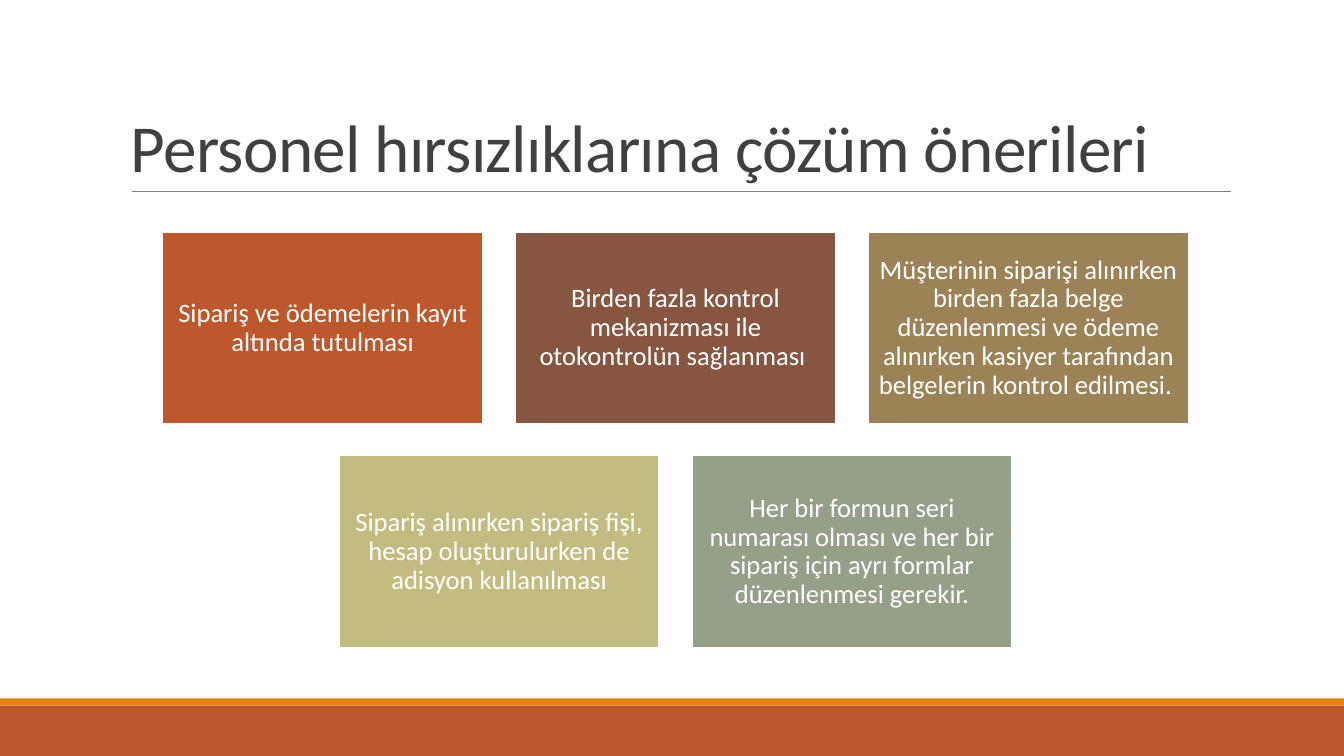
from pptx import Presentation
from pptx.dml.color import RGBColor
from pptx.enum.shapes import MSO_CONNECTOR, MSO_SHAPE
from pptx.enum.text import MSO_ANCHOR, PP_ALIGN
from pptx.oxml.ns import qn
from pptx.util import Inches, Pt
from lxml.etree import SubElement

WHITE = RGBColor(0xFF, 0xFF, 0xFF)
TITLE_GRAY = RGBColor(0x40, 0x40, 0x40)
RULE_GRAY = RGBColor(0x80, 0x80, 0x80)
RUST = RGBColor(0xBD, 0x58, 0x2C)
ORANGE = RGBColor(0xE4, 0x83, 0x12)
BROWN = RGBColor(0x86, 0x56, 0x40)
TAN = RGBColor(0x9B, 0x83, 0x57)
KHAKI = RGBColor(0xC2, 0xBC, 0x80)
SAGE = RGBColor(0x94, 0xA0, 0x88)

TITLE = "Personel hırsızlıklarına çözüm önerileri"
CARD_ROWS = [
    [
        ("Sipariş ve ödemelerin kayıt altında tutulması", RUST),
        ("Birden fazla kontrol mekanizması ile otokontrolün sağlanması ", BROWN),
        ("Müşterinin siparişi alınırken birden fazla belge düzenlenmesi ve ödeme "
         "alınırken kasiyer tarafından belgelerin kontrol edilmesi. ", TAN),
    ],
    [
        ("Sipariş alınırken sipariş fişi, hesap oluşturulurken de adisyon kullanılması", KHAKI),
        ("Her bir formun seri numarası olması ve her bir sipariş için ayrı formlar "
         "düzenlenmesi gerekir.", SAGE),
    ],
]
FOOTER_BANDS = [(7, 0.5, RUST), (6.93, 0.07, ORANGE)]

SLIDE_WIDTH, SLIDE_HEIGHT = 13.33, 7.5
CARD_WIDTH, CARD_HEIGHT = 3.18, 1.91
CARD_GAP_X, CARD_GAP_Y = 0.32, 0.31
CARDS_CENTER, CARDS_TOP = 6.7, 2.3

CARD_FRAME = {"word_wrap": True, "vertical_anchor": MSO_ANCHOR.MIDDLE,
              "margin_left": Inches(0.08), "margin_right": Inches(0.08),
              "margin_top": Inches(0.08), "margin_bottom": Inches(0.08)}
CARD_PARAGRAPH = {"alignment": PP_ALIGN.CENTER, "line_spacing": 0.9}
CARD_FONT = {"name": "Calibri", "size": Pt(19)}
TITLE_FRAME = {"word_wrap": True, "vertical_anchor": MSO_ANCHOR.BOTTOM}
TITLE_PARAGRAPH = {"alignment": PP_ALIGN.LEFT, "line_spacing": 0.85}
TITLE_FONT = {"name": "Calibri", "size": Pt(48)}


def set_attributes(target, values):
    for name, value in values.items():
        setattr(target, name, value)


def write_text(shape, text, color, frame_format, paragraph_format, font_format):
    frame = shape.text_frame
    set_attributes(frame, frame_format)
    paragraph = frame.paragraphs[0]
    set_attributes(paragraph, paragraph_format)
    run = paragraph.add_run()
    run.text = text
    set_attributes(run.font, font_format)
    run.font.color.rgb = color
    return run


def add_rectangle(slide, left, top, width, height, color):
    shape = slide.shapes.add_shape(
        MSO_SHAPE.RECTANGLE, Inches(left), Inches(top), Inches(width), Inches(height))
    shape.shadow.inherit = False
    shape.fill.solid()
    shape.fill.fore_color.rgb = color
    shape.line.fill.background()
    return shape


def add_title(slide):
    box = slide.shapes.add_textbox(Inches(1.2), Inches(0.31), Inches(11), Inches(1.59))
    run = write_text(box, TITLE, TITLE_GRAY, TITLE_FRAME, TITLE_PARAGRAPH, TITLE_FONT)
    run.font._element.set("spc", "-50")
    rule = slide.shapes.add_connector(
        MSO_CONNECTOR.STRAIGHT, Inches(1.31), Inches(1.9), Inches(12.21), Inches(1.9))
    rule.line.color.rgb = RULE_GRAY
    rule.line.width = Pt(0.5)
    SubElement(rule._element.spPr, qn("a:effectLst"))


def add_cards(slide):
    for row_index, row in enumerate(CARD_ROWS):
        row_width = len(row) * CARD_WIDTH + (len(row) - 1) * CARD_GAP_X
        row_left = CARDS_CENTER - row_width / 2
        top = CARDS_TOP + row_index * (CARD_HEIGHT + CARD_GAP_Y)
        for column, (text, color) in enumerate(row):
            left = row_left + column * (CARD_WIDTH + CARD_GAP_X)
            card = add_rectangle(slide, left, top, CARD_WIDTH, CARD_HEIGHT, color)
            card.line.color.rgb = WHITE
            card.line.width = Pt(1.25)
            write_text(card, text, WHITE, CARD_FRAME, CARD_PARAGRAPH, CARD_FONT)


def main():
    presentation = Presentation()
    presentation.slide_width = Inches(SLIDE_WIDTH)
    presentation.slide_height = Inches(SLIDE_HEIGHT)
    slide = presentation.slides.add_slide(presentation.slide_layouts[6])
    for top, height, color in FOOTER_BANDS:
        add_rectangle(slide, 0, top, SLIDE_WIDTH, height, color)
    add_title(slide)
    add_cards(slide)
    presentation.save("out.pptx")


if __name__ == "__main__":
    main()
